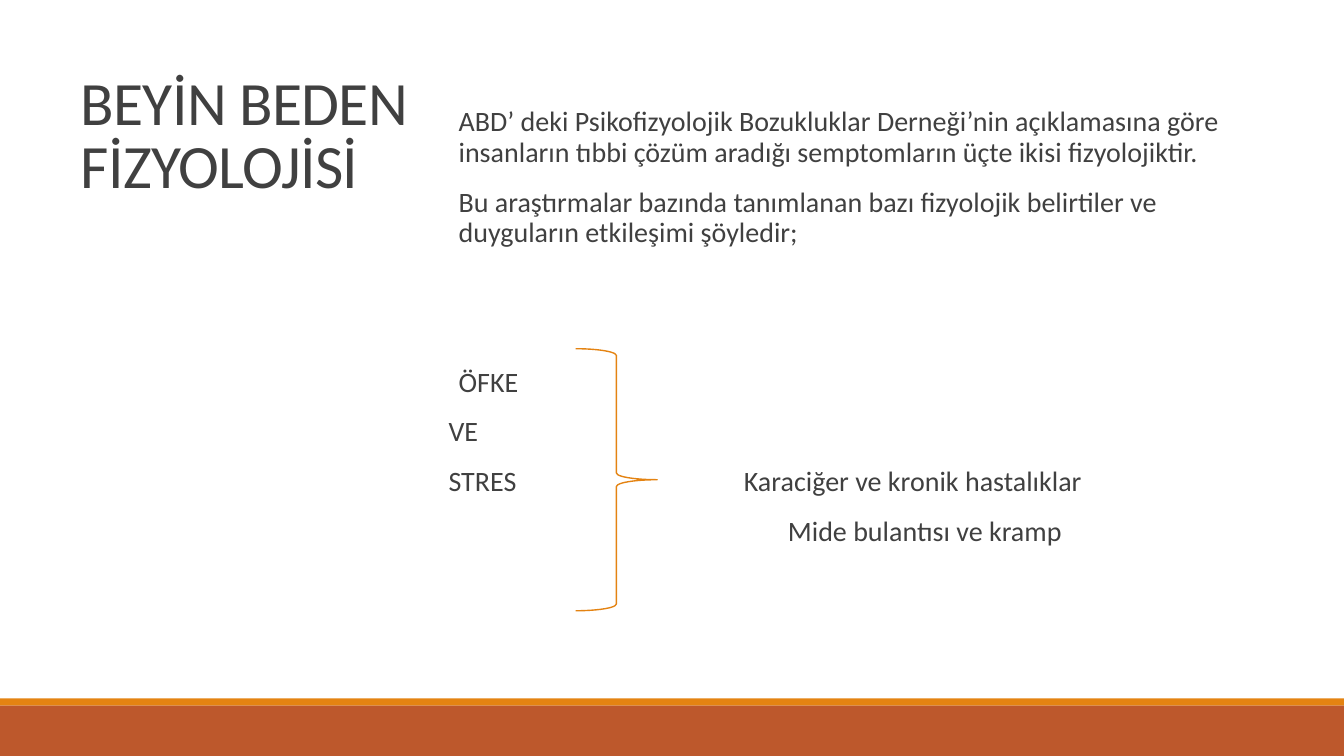
from dataclasses import dataclass

from pptx import Presentation
from pptx.dml.color import RGBColor
from pptx.enum.shapes import MSO_SHAPE
from pptx.enum.text import MSO_ANCHOR, PP_ALIGN
from pptx.util import Emu, Inches, Pt

RECT = MSO_SHAPE.RECTANGLE
BRACE = MSO_SHAPE.RIGHT_BRACE
TOP = MSO_ANCHOR.TOP
LEFT = PP_ALIGN.LEFT

FONT = "Calibri"
COLORS = {"text": "404040", "orange": "E48312", "rust": "BD582C"}
COLS, ROWS = 40, 30


@dataclass
class Area:
    """Place on the slide, in grid columns and rows."""
    col: float
    row: float
    cols: float
    rows: float


@dataclass
class Para:
    text: str
    indent: float = 0  # grid columns


@dataclass
class Block:
    area: Area
    paras: list[Para]
    size: float = 20
    line: float = 0.9
    inset: float = 0  # grid columns
    tracking: int = 0  # hundredths of a point


@dataclass
class Band:
    area: Area
    color: str


BANDS = [
    Band(Area(0, 27.72, COLS, 0.28), "orange"),
    Band(Area(0, 28, COLS, 2), "rust"),
]
BRACE_AREA = Area(17.13, 13.84, 2.43, 10.4)

BLOCKS = [
    Block(Area(2.1, 2.8, 11.22, 22.88), [Para("BEYİN BEDEN FİZYOLOJİSİ")],
          size=44, line=0.85, inset=0.3, tracking=-50),
    Block(Area(13.35, 4.08, 24.57, 6), [
        Para("ABD’ deki Psikofizyolojik Bozukluklar Derneği’nin açıklamasına göre "
             "insanların tıbbi çözüm aradığı semptomların üçte ikisi fizyolojiktir.", 0.3),
        Para("Bu araştırmalar bazında tanımlanan bazı fizyolojik belirtiler ve "
             "duyguların etkileşimi şöyledir;", 0.3),
    ]),
    Block(Area(13.35, 14.4, 3.5, 6), [Para("ÖFKE", 0.3), Para("VE"), Para("STRES")]),
    Block(Area(22.14, 18.36, 13, 4), [
        Para("Karaciğer ve kronik hastalıklar"),
        Para("Mide bulantısı ve kramp", 1.31),
    ]),
]

prs = Presentation()
prs.slide_width, prs.slide_height = Inches(13.333), Inches(7.5)


def across(cols: float) -> Emu:
    return Emu(round(prs.slide_width * cols / COLS))


def down(rows: float) -> Emu:
    return Emu(round(prs.slide_height * rows / ROWS))


def place(a: Area) -> tuple[Emu, Emu, Emu, Emu]:
    return across(a.col), down(a.row), across(a.cols), down(a.rows)


def rgb(name: str) -> RGBColor:
    return RGBColor.from_string(COLORS[name])


def add_band(s, band: Band) -> None:
    sp = s.shapes.add_shape(RECT, *place(band.area))
    sp.shadow.inherit = False
    sp.fill.solid()
    sp.fill.fore_color.rgb = rgb(band.color)
    sp.line.fill.background()


def add_brace(s, area: Area) -> None:
    sp = s.shapes.add_shape(BRACE, *place(area))
    sp.shadow.inherit = False
    sp.fill.background()
    sp.line.color.rgb = rgb("orange")
    sp.line.width = Pt(1)


def add_block(s, block: Block) -> None:
    tf = s.shapes.add_textbox(*place(block.area)).text_frame
    tf.word_wrap = True
    tf.vertical_anchor = TOP
    tf.margin_left = tf.margin_right = across(block.inset)
    tf.margin_top = tf.margin_bottom = down(0.2)
    for i, para in enumerate(block.paras):
        p = tf.add_paragraph() if i else tf.paragraphs[0]
        p.alignment = LEFT
        p.line_spacing = block.line
        p.space_before = Pt(12 if i else 0)
        p.space_after = Pt(2)
        if para.indent:
            p._p.get_or_add_pPr().set("marL", str(across(para.indent)))
        r = p.add_run()
        r.text = para.text
        r.font.name = FONT
        r.font.size = Pt(block.size)
        r.font.color.rgb = rgb("text")
        if block.tracking:
            r._r.get_or_add_rPr().set("spc", str(block.tracking))


def main() -> None:
    s = prs.slides.add_slide(prs.slide_layouts[6])
    # Title, introduction, feelings and symptoms
    for block in BLOCKS:
        add_block(s, block)
    # Footer bands
    for band in BANDS:
        add_band(s, band)
    # Brace from feelings to symptoms
    add_brace(s, BRACE_AREA)
    prs.save("out.pptx")


if __name__ == "__main__":
    main()
